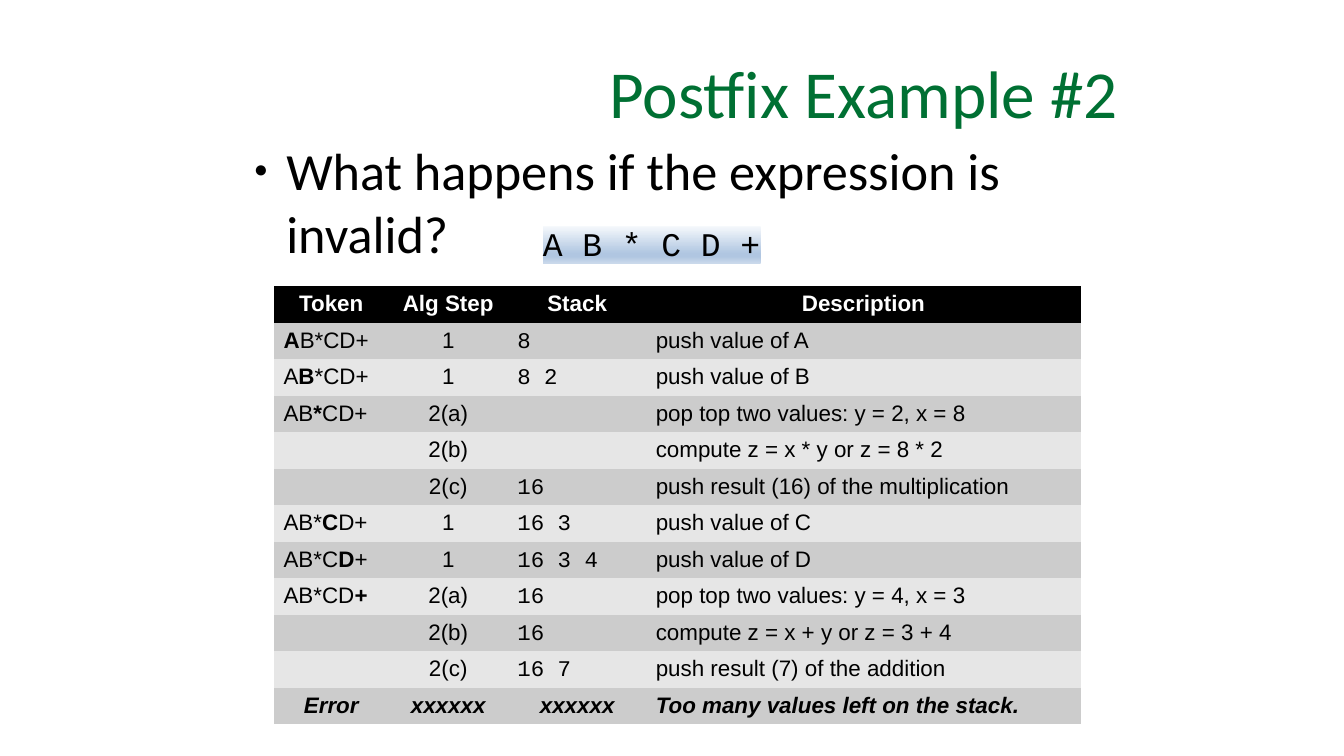
import pptx
import pptx.util
import pptx.dml.color
import pptx.enum.shapes
import pptx.enum.text
import pptx.oxml.ns
from lxml import etree

Inches, Pt = pptx.util.Inches, pptx.util.Pt
RGB = pptx.dml.color.RGBColor.from_string
ALIGN = pptx.enum.text.PP_ALIGN
ANCHOR = pptx.enum.text.MSO_ANCHOR
qn = pptx.oxml.ns.qn

# Content
TITLE = "Postfix Example #2"
QUESTION = "What happens if the expression is invalid?"
EXPRESSION = "A B * C D +"
TOKENS = "AB*CD+"
HEADER = ("Token", "Alg Step", "Stack", "Description")
STEPS = [  # position of the current token, step, stack, description
    (0, "1", "8", "push value of A"),
    (1, "1", "8 2", "push value of B"),
    (2, "2(a)", "", "pop top two values: y = 2, x = 8"),
    (None, "2(b)", "", "compute z = x * y or z = 8 * 2"),
    (None, "2(c)", "16", "push result (16) of the multiplication"),
    (3, "1", "16 3", "push value of C"),
    (4, "1", "16 3 4", "push value of D"),
    (5, "2(a)", "16", "pop top two values: y = 4, x = 3"),
    (None, "2(b)", "16", "compute z = x + y or z = 3 + 4"),
    (None, "2(c)", "16 7", "push result (7) of the addition"),
]
ERROR = ("Error", "xxxxxx", "xxxxxx", "Too many values left on the stack.")

THEME = {
    "title": {"name": "Calibri", "size": Pt(36), "color": "007033"},
    "body": {"name": "Calibri", "size": Pt(28), "color": "000000"},
    "code": {"name": "Courier New", "size": Pt(17.7), "color": "000000"},
    "cell": {"name": "Arial", "size": Pt(12), "color": "000000", "bold": False},
    "header_fill": "000000",
    "bands": ("CCCCCC", "E6E6E6"),
    "border": "FFFFFF",
    "gradient": ((0, "F6F9FC"), (74, "B0C6E1"), (83, "B0C6E1"), (100, "CAD9EB")),
}
CELL = THEME["cell"]
HEAD = {**CELL, "color": "FFFFFF", "bold": True}
STACK = {**CELL, "name": "Courier New"}
FINAL = {**CELL, "bold": True, "italic": True}

COLUMNS = (0.85, 0.89, 1.03, 3.23)
TABLE_HEIGHT = 3.26


def box(left, top, width, height):
    return [Inches(v) for v in (left, top, width, height)]


def place(shape, *bounds):
    for name, value in zip(("left", "top", "width", "height"), box(*bounds)):
        setattr(shape, name, value)


def set_margins(target, left, top, right, bottom):
    for side, value in zip(("left", "top", "right", "bottom"), (left, top, right, bottom)):
        setattr(target, "margin_" + side, Inches(value))


def add_run(p, text, style):
    r = p.add_run()
    r.text = text
    for name, value in style.items():
        if name == "color":
            r.font.color.rgb = RGB(value)
        else:
            setattr(r.font, name, value)


def add_borders(cell, color):
    tcPr = cell._tc.get_or_add_tcPr()
    for i, side in enumerate(("lnL", "lnR", "lnT", "lnB")):
        ln = etree.Element(qn("a:" + side), w=str(Pt(0.03)))
        fill = etree.SubElement(ln, qn("a:solidFill"))
        etree.SubElement(fill, qn("a:srgbClr"), val=color)
        tcPr.insert(i, ln)


def fill_cell(cell, runs, align, fill):
    cell.fill.solid()
    cell.fill.fore_color.rgb = RGB(fill)
    add_borders(cell, THEME["border"])
    set_margins(cell, 0.07, 0.05, 0.07, 0.03)
    p = cell.text_frame.paragraphs[0]
    p.alignment, p.line_spacing = align, 0.93
    for text, style in runs:
        if text:
            add_run(p, text, style)
    if not p.runs:  # keeps empty cells at the row height
        end = etree.SubElement(p._p, qn("a:endParaRPr"), sz=str(int(CELL["size"].pt * 100)))
        etree.SubElement(end, qn("a:latin"), typeface=CELL["name"])


def token_runs(i):
    if i is None:
        return []
    return [(TOKENS[:i], CELL), (TOKENS[i], {**CELL, "bold": True}), (TOKENS[i + 1:], CELL)]


prs = pptx.Presentation()
prs.slide_width = Inches(10)
prs.slide_height = prs.slide_width * 9 // 16
s = prs.slides.add_slide(prs.slide_layouts[1])

# Title
title = s.shapes.title
place(title, 1.62, 0.22, 6.77, 0.94)
tf = title.text_frame
set_margins(tf, 0.07, 0.03, 0.07, 0.04)
tf.vertical_anchor = ANCHOR.MIDDLE
tf.auto_size = pptx.enum.text.MSO_AUTO_SIZE.NONE
tf.paragraphs[0].alignment = ALIGN.RIGHT
add_run(tf.paragraphs[0], TITLE, THEME["title"])

# Question
body = s.placeholders[1]
place(body, 1.71, 0.98, 6.28, 3.71)
tf = body.text_frame
tf.auto_size = pptx.enum.text.MSO_AUTO_SIZE.NONE
p = tf.paragraphs[0]
p.space_before = Pt(0)
pPr = p._p.get_or_add_pPr()
pPr.set("marL", str(Inches(0.32)))
pPr.set("indent", str(Inches(-0.24)))
etree.SubElement(pPr, qn("a:buSzPct"), val="45000")
etree.SubElement(pPr, qn("a:buChar"), char="●")
add_run(p, QUESTION, THEME["body"])

# Trace table: each row is a list of (runs, alignment)
center, left = ALIGN.CENTER, ALIGN.LEFT
rows = [[([(text, HEAD)], center) for text in HEADER]]
for i, step, stack, description in STEPS:
    rows.append([(token_runs(i), left), ([(step, CELL)], center),
                 ([(stack, STACK)], left), ([(description, CELL)], left)])
rows.append([([(text, FINAL)], align)
             for text, align in zip(ERROR, (center, center, center, left))])

frame = s.shapes.add_table(len(rows), len(COLUMNS),
                           *box(2.04, 2.13, sum(COLUMNS), TABLE_HEIGHT))
body._element.addprevious(frame._element)
table = frame.table
for column, width in zip(table.columns, COLUMNS):
    column.width = Inches(width)
for n, row in enumerate(rows):
    table.rows[n].height = Inches(TABLE_HEIGHT / len(rows))
    fill = THEME["bands"][(n - 1) % 2] if n else THEME["header_fill"]
    for c, (runs, align) in enumerate(row):
        fill_cell(table.cell(n, c), runs, align, fill)

# Expression on a gradient panel
panel = s.shapes.add_shape(pptx.enum.shapes.MSO_SHAPE.RECTANGLE, *box(4.04, 1.68, 1.62, 0.28))
panel.shadow.inherit = False
panel.line.fill.background()
panel.fill.gradient()
panel.fill.gradient_angle = 270
stops = panel._element.spPr.find(".//" + qn("a:gsLst"))
for stop in list(stops):
    stops.remove(stop)
for position, color in THEME["gradient"]:
    stop = etree.SubElement(stops, qn("a:gs"), pos=str(position * 1000))
    etree.SubElement(stop, qn("a:srgbClr"), val=color)
tf = panel.text_frame
tf.word_wrap = False
tf.vertical_anchor = ANCHOR.MIDDLE
set_margins(tf, 0, 0.01, 0, 0)
p = tf.paragraphs[0]
p.alignment, p.line_spacing = ALIGN.LEFT, 0.94
add_run(p, EXPRESSION, THEME["code"])

prs.save("out.pptx")
